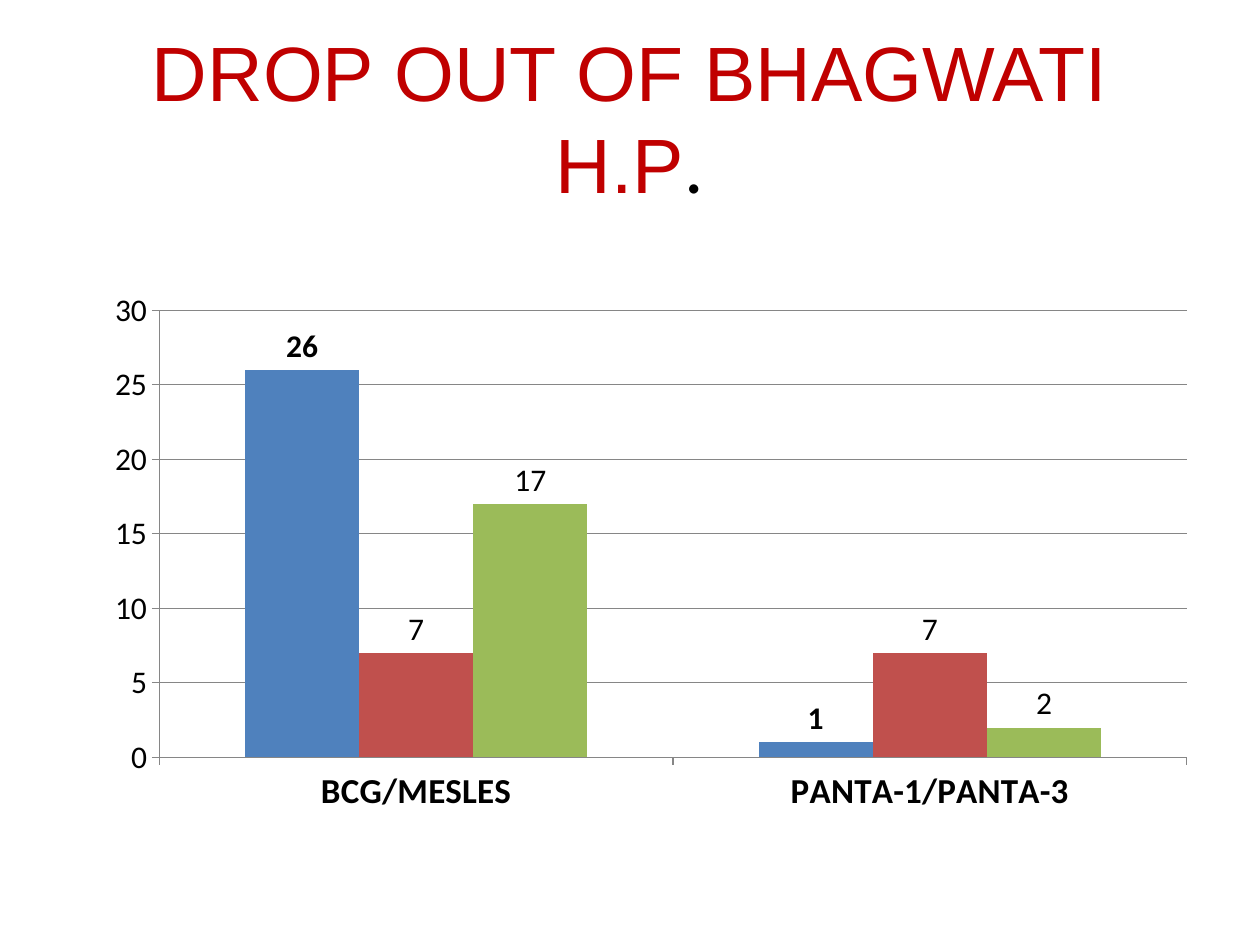
from dataclasses import dataclass

from lxml import etree
from pptx import Presentation
from pptx.chart.data import CategoryChartData
from pptx.dml.color import RGBColor
from pptx.enum import chart as ch, text
from pptx.oxml import ns
from pptx.util import Pt


@dataclass(frozen=True)
class Theme:
    title_font: str = "Arial"
    body_font: str = "Calibri"
    title_size: int = 44
    chart_size: int = 18
    category_size: int = 20
    title_color: str = "C00000"
    ink: str = "000000"
    rule: str = "868686"


@dataclass(frozen=True)
class Box:
    left: float
    top: float
    width: float
    height: float

    def lengths(self) -> list:
        return [Pt(v) for v in (self.left, self.top, self.width, self.height)]


@dataclass(frozen=True)
class Series:
    name: str
    values: tuple
    color: str
    bold_labels: bool = False


THEME = Theme()
CATEGORIES = ("BCG/MESLES", "PANTA-1/PANTA-3")
SERIES = (
    Series("Series 1", (26, 1), "4F81BD", True),
    Series("Series 2", (7, 7), "C0504D"),
    Series("Series 3", (17, 2), "9BBB59"),
)
# Inner plot area as fractions of the chart frame
PLOT = {"x": 0.085, "y": 0.144, "w": 0.906, "h": 0.717}


def style_font(font, name: str, size: float, color: str, bold: bool = False) -> None:
    font.name = name
    font.size = Pt(size)
    font.bold = bold
    font.color.rgb = RGBColor.from_string(color)


def add_title(s, box: Box, runs: tuple) -> None:
    tf = s.shapes.add_textbox(*box.lengths()).text_frame
    tf.word_wrap = True
    tf.vertical_anchor = text.MSO_ANCHOR.MIDDLE
    p = tf.paragraphs[0]
    p.alignment = text.PP_ALIGN.CENTER
    for words, font, color in runs:
        r = p.add_run()
        r.text = words
        style_font(r.font, font, THEME.title_size, color)


def set_plot_layout(chart) -> None:
    plot_area = chart._chartSpace.chart.plotArea
    for old in plot_area.findall(ns.qn("c:layout")):
        plot_area.remove(old)
    layout = etree.Element(ns.qn("c:layout"))
    manual = etree.SubElement(layout, ns.qn("c:manualLayout"))
    settings = {"layoutTarget": "inner", "xMode": "edge", "yMode": "edge", **PLOT}
    for tag, value in settings.items():
        etree.SubElement(manual, ns.qn(f"c:{tag}")).set("val", str(value))
    plot_area.insert(0, layout)


def style_axis(axis, size: float, bold: bool = False) -> None:
    style_font(axis.tick_labels.font, THEME.body_font, size, THEME.ink, bold)
    axis.major_tick_mark = ch.XL_TICK_MARK.OUTSIDE
    axis.minor_tick_mark = ch.XL_TICK_MARK.NONE
    axis.format.line.color.rgb = RGBColor.from_string(THEME.rule)
    axis.format.line.width = Pt(0.75)


def add_column_chart(s, box: Box) -> None:
    data = CategoryChartData()
    data.categories = CATEGORIES
    for item in SERIES:
        data.add_series(item.name, item.values)
    chart = s.shapes.add_chart(
        ch.XL_CHART_TYPE.COLUMN_CLUSTERED, *box.lengths(), data
    ).chart
    chart.has_title = False
    chart.has_legend = False
    style_font(chart.font, THEME.body_font, THEME.chart_size, THEME.ink)
    set_plot_layout(chart)

    # Axes and gridlines
    style_axis(chart.category_axis, THEME.category_size, bold=True)
    values = chart.value_axis
    style_axis(values, THEME.chart_size)
    values.minimum_scale, values.maximum_scale, values.major_unit = 0, 30, 5
    values.has_major_gridlines = True
    grid = values.major_gridlines.format.line
    grid.color.rgb = RGBColor.from_string(THEME.rule)
    grid.width = Pt(0.75)

    # Columns and value labels
    plot = chart.plots[0]
    plot.vary_by_categories = False
    plot.gap_width = 150
    plot.overlap = 0
    for series, item in zip(plot.series, SERIES):
        series.format.fill.solid()
        series.format.fill.fore_color.rgb = RGBColor.from_string(item.color)
        labels = series.data_labels
        labels.show_value = True
        labels.position = ch.XL_LABEL_POSITION.OUTSIDE_END
        style_font(labels.font, THEME.body_font, THEME.chart_size,
                   THEME.ink, item.bold_labels)


def main() -> None:
    prs = Presentation()
    prs.slide_width, prs.slide_height = Pt(720), Pt(540)
    s = prs.slides.add_slide(prs.slide_layouts[6])
    add_title(s, Box(36, 21.6, 648, 90), (
        ("DROP OUT OF BHAGWATI H.P", THEME.title_font, THEME.title_color),
        (".", THEME.body_font, THEME.ink),
    ))
    add_column_chart(s, Box(36, 126, 648, 356.4))
    prs.save("out.pptx")


if __name__ == "__main__":
    main()
